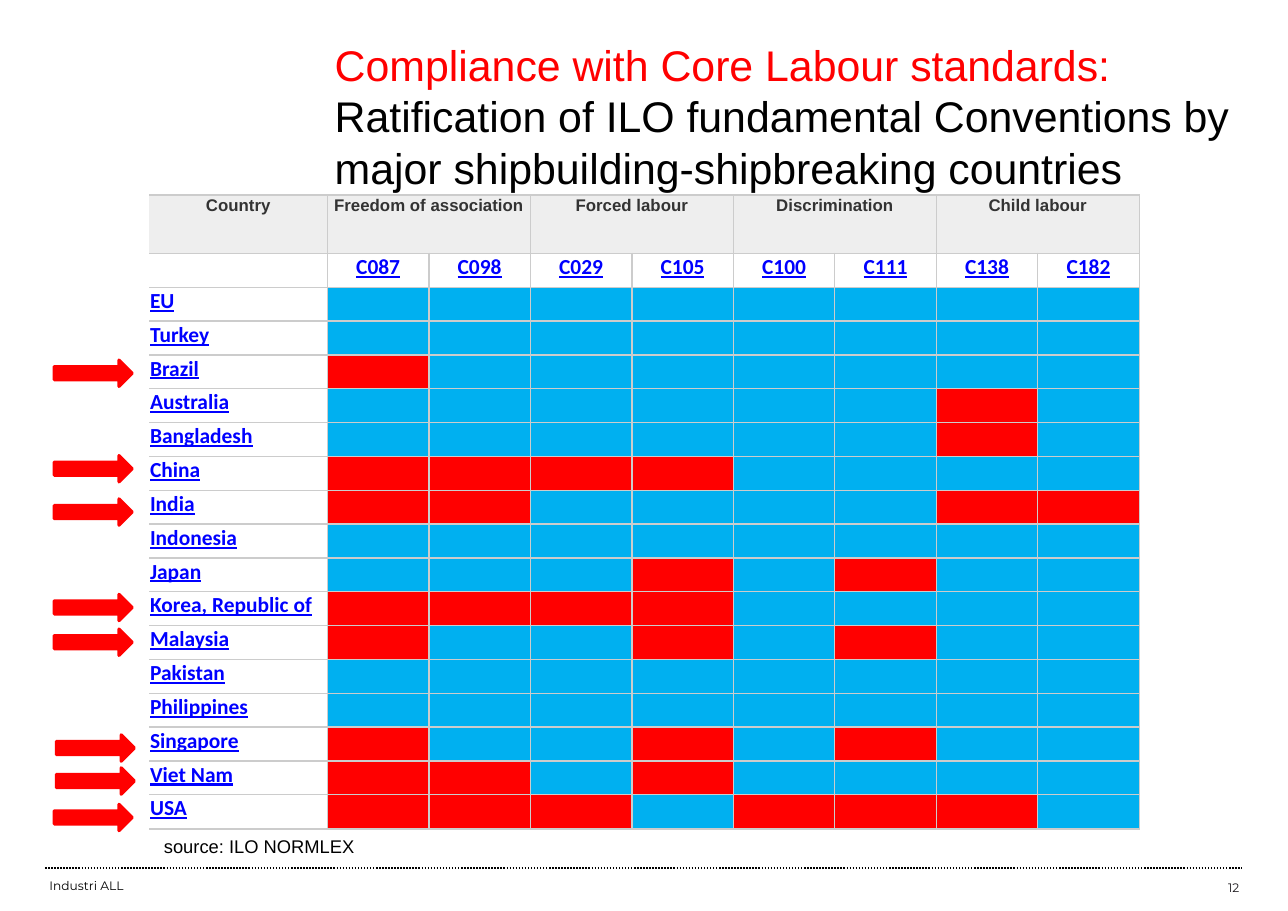
from dataclasses import dataclass

import pptx
import pptx.dml.color
import pptx.enum.dml
import pptx.enum.shapes
import pptx.enum.text
import pptx.oxml.ns
import pptx.slide
import pptx.table
import pptx.text.text
import pptx.util
from lxml import etree

Cm = pptx.util.Cm
Pt = pptx.util.Pt
RGBColor = pptx.dml.color.RGBColor
Align = pptx.enum.text.PP_ALIGN
Anchor = pptx.enum.text.MSO_ANCHOR
qn = pptx.oxml.ns.qn

BLACK = RGBColor(0x00, 0x00, 0x00)
RED = RGBColor(0xFF, 0x00, 0x00)
RATIFIED_BLUE = RGBColor(0x00, 0xB0, 0xF0)
LINK_BLUE = RGBColor(0x00, 0x00, 0xFF)
HEADER_GREY = RGBColor(0xEE, 0xEE, 0xEE)
HEADER_TEXT = RGBColor(0x33, 0x33, 0x33)
BORDER_GREY = RGBColor(0xCC, 0xCC, 0xCC)
NUMBER_TEXT = RGBColor(0x1A, 0x17, 0x1B)


@dataclass(frozen=True)
class Style:
    font: str
    size: float
    color: RGBColor
    bold: bool = False
    underline: bool = False


@dataclass(frozen=True)
class Label:
    left: float
    top: float
    width: float
    height: float
    runs: tuple[tuple[str, Style], ...]
    align: Align = Align.LEFT
    anchor: Anchor = Anchor.MIDDLE
    inset_x: float = 0.28
    inset_y: float = 0.15
    line_spacing: float | None = None


@dataclass(frozen=True)
class Country:
    name: str
    missing: tuple[str, ...] = ()


@dataclass(frozen=True)
class Arrow:
    left: float
    top: float


HEADER_STYLE = Style("Arial", 11, HEADER_TEXT, bold=True)
LINK_STYLE = Style("Calibri", 14, LINK_BLUE, bold=True, underline=True)

LABELS = (
    Label(0.86, 20.19, 15.4, 0.44, (("Industri ALL", Style("Montserrat", 8, BLACK)),)),
    Label(7.44, 0.74, 21.21, 3.86, (
        ("Compliance with Core Labour standards: ", Style("Arial", 28, RED)),
        ("Ratification of ILO fundamental Conventions by major shipbuilding-shipbreaking countries",
         Style("Arial", 28, BLACK)),
    ), anchor=Anchor.TOP, line_spacing=33.6),
    Label(21.92, 20.22, 6.94, 0.48, (("12", Style("Montserrat", 8, NUMBER_TEXT)),), Align.RIGHT),
    Label(3.53, 19.13, 8.61, 0.76, (("source: ILO NORMLEX", Style("Arial", 12, BLACK)),),
          anchor=Anchor.TOP, inset_x=0.25, inset_y=0.13),
)

TOPICS = ("Freedom of association", "Forced labour", "Discrimination", "Child labour")
CONVENTIONS = ("C087", "C098", "C029", "C105", "C100", "C111", "C138", "C182")
COUNTRIES = (
    Country("EU"),
    Country("Turkey"),
    Country("Brazil", ("C087",)),
    Country("Australia", ("C138",)),
    Country("Bangladesh", ("C138",)),
    Country("China", ("C087", "C098", "C029", "C105")),
    Country("India", ("C087", "C098", "C138", "C182")),
    Country("Indonesia"),
    Country("Japan", ("C105", "C111")),
    Country("Korea, Republic of", ("C087", "C098", "C029", "C105")),
    Country("Malaysia", ("C087", "C105", "C111")),
    Country("Pakistan"),
    Country("Philippines"),
    Country("Singapore", ("C087", "C105", "C111")),
    Country("Viet Nam", ("C087", "C098", "C105")),
    Country("USA", ("C087", "C098", "C029", "C100", "C111", "C138")),
)
ARROWS = (
    Arrow(1.25, 8.3), Arrow(1.25, 10.5), Arrow(1.25, 11.5), Arrow(1.25, 13.7),
    Arrow(1.25, 14.5), Arrow(1.3, 16.94), Arrow(1.3, 17.7), Arrow(1.25, 18.54),
)


def add_run(paragraph: pptx.text.text._Paragraph, text: str, style: Style) -> None:
    run = paragraph.add_run()
    run.text = text
    run.font.name = style.font
    run.font.size = Pt(style.size)
    run.font.bold = style.bold
    run.font.underline = style.underline
    run.font.color.rgb = style.color


def add_label(slide: pptx.slide.Slide, label: Label) -> None:
    shape = slide.shapes.add_textbox(Cm(label.left), Cm(label.top), Cm(label.width), Cm(label.height))
    frame = shape.text_frame
    frame.word_wrap = True
    frame.vertical_anchor = label.anchor
    frame.margin_left = frame.margin_right = Cm(label.inset_x)
    frame.margin_top = frame.margin_bottom = Cm(label.inset_y)
    paragraph = frame.paragraphs[0]
    paragraph.alignment = label.align
    if label.line_spacing:
        paragraph.line_spacing = Pt(label.line_spacing)
    for text, style in label.runs:
        add_run(paragraph, text, style)


def add_footer_line(slide: pptx.slide.Slide) -> None:
    connector = slide.shapes.add_connector(
        pptx.enum.shapes.MSO_CONNECTOR.STRAIGHT, Cm(1.04), Cm(20.01), Cm(28.65), Cm(20.01))
    connector.line.color.rgb = BLACK
    connector.line.width = Pt(1)
    connector.line.dash_style = pptx.enum.dml.MSO_LINE.ROUND_DOT
    etree.SubElement(connector._element.spPr, qn("a:effectLst"))


def set_border(cell: pptx.table._Cell, side: str, width: float) -> None:
    properties = cell._tc.get_or_add_tcPr()
    line = etree.SubElement(properties, qn(f"a:ln{side}"), w=str(Pt(width)))
    if width:
        fill = etree.SubElement(line, qn("a:solidFill"))
        etree.SubElement(fill, qn("a:srgbClr"), val=str(BORDER_GREY))
    else:
        etree.SubElement(line, qn("a:noFill"))


def style_cell(cell: pptx.table._Cell, borders: dict[str, float], fill: RGBColor | None) -> None:
    cell.margin_left = cell.margin_right = cell.margin_top = Cm(0.02)
    cell.margin_bottom = Cm(0)
    for side, width in borders.items():
        set_border(cell, side, width)
    if fill is None:
        cell.fill.background()
    else:
        cell.fill.solid()
        cell.fill.fore_color.rgb = fill


def write_cell(cell: pptx.table._Cell, text: str, style: Style, align: Align) -> None:
    paragraph = cell.text_frame.paragraphs[0]
    paragraph.alignment = align
    if text:
        add_run(paragraph, text, style)
    else:
        etree.SubElement(paragraph._p, qn("a:endParaRPr"), sz="1400")


def cell_fill(row: int, column: int) -> RGBColor | None:
    if row == 0:
        return HEADER_GREY
    if row == 1 or column == 0:
        return None
    return RED if CONVENTIONS[column - 1] in COUNTRIES[row - 2].missing else RATIFIED_BLUE


def add_ratification_table(slide: pptx.slide.Slide) -> None:
    header = ["Country"]
    for topic in TOPICS:
        header += [topic, ""]
    blanks = [""] * len(CONVENTIONS)
    rows = [header, ["", *CONVENTIONS]] + [[country.name, *blanks] for country in COUNTRIES]
    frame = slide.shapes.add_table(len(rows), len(header), Cm(3.44), Cm(4.5), Cm(22.81), Cm(14.6))
    table = frame.table
    table.first_row = table.horz_banding = False
    for index, column in enumerate(table.columns):
        column.width = Cm(2.34 if index else 4.11)
    for index, row in enumerate(table.rows):
        row.height = Cm(0.78 if index else 1.34)
    for row, texts in enumerate(rows):
        for column, text in enumerate(texts):
            cell = table.cell(row, column)
            borders = {
                "L": 1 if column else 0,
                "R": 1,
                "T": 1 if row else 1.5,
                "B": 1.5 if row == len(rows) - 1 else 1,
            }
            style_cell(cell, borders, cell_fill(row, column))
            align = Align.CENTER if row < 2 else Align.LEFT
            write_cell(cell, text, LINK_STYLE if row else HEADER_STYLE, align)
    for column in range(1, len(header), 2):
        table.cell(0, column).merge(table.cell(0, column + 1))


def add_arrow(slide: pptx.slide.Slide, arrow: Arrow) -> None:
    shape = slide.shapes.add_shape(
        pptx.enum.shapes.MSO_SHAPE.RIGHT_ARROW, Cm(arrow.left), Cm(arrow.top), Cm(1.8), Cm(0.61))
    shape.shadow.inherit = False
    shape.fill.solid()
    shape.fill.fore_color.rgb = RED
    shape.line.color.rgb = RED
    shape.line.width = Pt(2)
    etree.SubElement(shape.line._get_or_add_ln(), qn("a:round"))


def main() -> None:
    presentation = pptx.Presentation()
    presentation.slide_width = Cm(29.7)
    presentation.slide_height = Cm(21)
    slide = presentation.slides.add_slide(presentation.slide_layouts[6])
    add_footer_line(slide)
    for label in LABELS:
        add_label(slide, label)
    add_ratification_table(slide)
    for arrow in ARROWS:
        add_arrow(slide, arrow)
    presentation.save("out.pptx")


if __name__ == "__main__":
    main()
